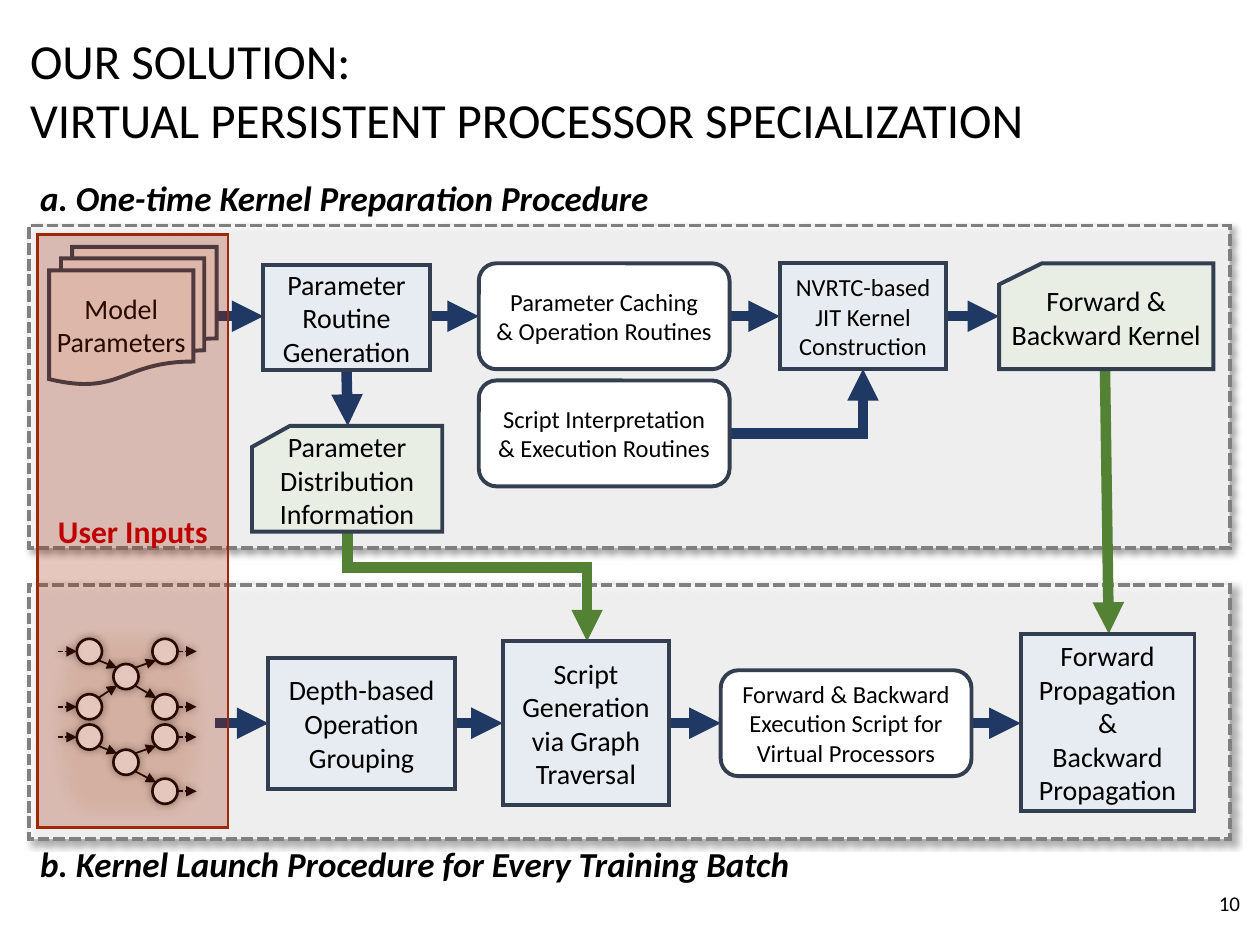
"""Builds a slide on virtual persistent processor specialization."""
import copy

import lxml.etree
import pptx
import pptx.dml.color
import pptx.enum.dml
import pptx.enum.shapes
import pptx.enum.text
import pptx.oxml.ns
import pptx.util

Inches, Pt, qn = pptx.util.Inches, pptx.util.Pt, pptx.oxml.ns.qn
Kind = pptx.enum.shapes.MSO_SHAPE
Link = pptx.enum.shapes.MSO_CONNECTOR
Align = pptx.enum.text.PP_ALIGN
Anchor = pptx.enum.text.MSO_ANCHOR
HEX = {
    "black": "000000", "white": "FFFFFF", "gray": "808080", "slate": "333F50",
    "navy": "203864", "green": "548235", "blue": "DEEBF7", "mint": "E2F0D9",
    "peach": "FBE5D6", "sand": "E7E1D9", "rust": "9E2807", "red": "C00000",
}
FLAT = (0, 0, 0, 0)
INSET = (0.1, 0.05, 0.1, 0.05)
CARD = (0, 0, 0, 0.15)


def tint(name):
    return pptx.dml.color.RGBColor.from_string(HEX[name])


def add(node, tag, **attrs):
    return lxml.etree.SubElement(node, qn(tag), {k: str(v) for k, v in attrs.items()})


def shade(effects, blur, dist=0, turn=0):
    glow = add(effects, "a:outerShdw", blurRad=Pt(blur), dist=Pt(dist),
               dir=turn * 60000, algn="ctr", rotWithShape=0)
    add(add(glow, "a:srgbClr", val=HEX["black"]), "a:alpha", val=40000)


def stroke(item, color, width, dash=False):
    item.line.color.rgb = tint(color)
    item.line.width = Pt(width)
    if dash:
        item.line.dash_style = pptx.enum.dml.MSO_LINE.SQUARE_DOT
    edge = item._element.spPr.find(qn("a:ln"))
    add(edge, "a:miter", lim=800000)
    return edge


def write(frame, text, size=16, color="black", bold=False, italic=False,
          align=Align.CENTER, anchor=Anchor.MIDDLE, inset=INSET):
    frame.word_wrap = True
    frame.vertical_anchor = anchor
    (frame.margin_left, frame.margin_top,
     frame.margin_right, frame.margin_bottom) = map(Inches, inset)
    frame.text = text
    for para in frame.paragraphs:
        para.alignment = align
        for run in para.runs:
            font = run.font
            font.name, font.size = "Calibri", Pt(size)
            font.bold, font.italic = bold, italic
            font.color.rgb = tint(color)
        for gap in para._p.findall(qn("a:br")):
            gap.append(copy.deepcopy(para.runs[0]._r.rPr))


def label(shapes, at, text, **form):
    box = shapes.add_textbox(*map(Inches, at))
    write(box.text_frame, text, **form)


def block(shapes, kind, at, fill, alpha=100, line="slate", width=2.25,
          dash=False, glow=None):
    item = shapes.add_shape(kind, *map(Inches, at))
    item.fill.solid()
    item.fill.fore_color.rgb = tint(fill)
    if alpha < 100:
        add(item._element.spPr.find(qn("a:solidFill"))[0], "a:alpha", val=alpha * 1000)
    if line:
        stroke(item, line, width, dash)
    else:
        item.line.fill.background()
    item.shadow.inherit = False
    if glow:
        shade(item._element.spPr.find(qn("a:effectLst")), *glow)
    return item


def arrow(shapes, ends, color="navy", width=6, dash=False, glow=None,
          kind=Link.STRAIGHT):
    item = shapes.add_connector(kind, *map(Inches, ends))
    add(stroke(item, color, width, dash), "a:tailEnd", type="triangle")
    effects = add(item._element.spPr, "a:effectLst")
    if glow:
        shade(effects, *glow)
    return item


def corner(shapes, ends):
    item = arrow(shapes, ends, kind=Link.ELBOW)
    item._element.spPr.find(qn("a:prstGeom")).set("prst", "bentConnector2")


def step(shapes, ends, bend):
    left, top, right, low = ends
    x, y = (left + right) / 2, (top + low) / 2
    w, h = (low - top) / 2, (right - left) / 2
    item = arrow(shapes, (x + w, y - h, x - w, y + h), "green", kind=Link.ELBOW)
    part = item._element.spPr
    part.find(qn("a:xfrm")).set("rot", str(270 * 60000))
    guides = part.find(qn("a:prstGeom")).find(qn("a:avLst"))
    add(guides, "a:gd", name="adj1", fmla=f"val {round(bend * 100000)}")


def graph(shapes):
    group = shapes.add_group_shape().shapes
    base = block(group, Kind.FLOWCHART_TERMINATOR, (0.33, 4.93, 1.38, 1.64),
                 "sand", line=None)
    add(base._element.spPr.find(qn("a:effectLst")), "a:softEdge", rad=Inches(0.14))
    glow, size, near, far = (5,), 0.2, 0.03, 0.17
    left, mid, right = 0.61, 0.9, 1.21
    trees = [((5.07, 5.51), 5.27, (5.07, 5.51)), ((5.75,), 5.95, (5.75, 6.18))]
    for ins, hub, outs in trees:
        spots = [(left, y) for y in ins] + [(mid, hub)] + [(right, y) for y in outs]
        for x, y in spots:
            block(group, Kind.OVAL, (x, y, size, size), "white",
                  line="black", width=1.5, glow=glow)
        links = [(left, y, mid, hub) for y in ins] + [(mid, hub, right, y) for y in outs]
        for x, y, u, v in links:
            start, stop = (far, near) if v > y else (near, far)
            arrow(group, (x + far, y + start, u + near, v + stop), "black", 1, glow=glow)
        stubs = [(left - 0.15, y) for y in ins] + [(right + size, y) for y in outs]
        for x, y in stubs:
            arrow(group, (x, y + size / 2, x + 0.15, y + size / 2), "black", 1, True, glow)


def main():
    deck = pptx.Presentation()
    deck.slide_width, deck.slide_height = Inches(10), Inches(7.5)
    shapes = deck.slides.add_slide(deck.slide_layouts[6]).shapes
    for top, height in ((1.79, 2.56), (4.64, 2.02)):
        block(shapes, Kind.RECTANGLE, (0.23, top, 9.53, height), "white", 80,
              "gray", dash=True, glow=(4, 3, 45))

    label(shapes, (0.14, 0.1, 8.5, 1.22),
          "OUR SOLUTION:\vVIRTUAL PERSISTENT PROCESSOR SPECIALIZATION",
          size=28, align=Align.LEFT)
    label(shapes, (9.47, 7.02, 0.47, 0.3), "10", size=12,
          align=Align.RIGHT, anchor=Anchor.TOP)
    for top, text in ((1.4, "a. One-time Kernel Preparation Procedure"),
                      (6.69, "b. Kernel Launch Procedure for Every Training Batch")):
        label(shapes, (0.22, top, 7.82, 0.34), text, size=20, bold=True, italic=True,
              align=Align.LEFT, anchor=Anchor.TOP, inset=(0.1, 0, 0, 0))

    rows = {2.51: ((1.72, 2.09), (3.42, 3.8), (5.79, 6.19), (7.51, 7.93)),
            5.74: ((1.71, 2.13), (3.61, 3.99), (5.32, 5.72), (7.71, 8.1))}
    for y, spans in rows.items():
        for start, stop in spans:
            arrow(shapes, (start, y, stop, y))
    arrow(shapes, (2.75, 2.94, 2.76, 3.38))
    arrow(shapes, (8.77, 2.93, 8.8, 5.03), "green")
    corner(shapes, (5.79, 3.44, 6.85, 2.93))
    step(shapes, (2.76, 4.21, 4.66, 5.09), 0.334)

    task = (Kind.FLOWCHART_PROCESS, "blue", 46)
    card = (Kind.FLOWCHART_CARD, "mint", 41)
    code = (Kind.FLOWCHART_ALTERNATE_PROCESS, "white", 100)
    pile = (Kind.FLOWCHART_MULTIDOCUMENT, "peach", 46)
    boxes = [
        (pile, (0.39, 1.96, 1.33, 1.09), "Model Parameters", 16, FLAT),
        (task, (2.09, 2.1, 1.32, 0.84), "Parameter Routine Generation", 16, INSET),
        (code, (3.8, 2.09, 1.99, 0.84), "Parameter Caching\v& Operation Routines", 14, INSET),
        (task, (6.19, 2.09, 1.32, 0.84), "NVRTC-based\nJIT Kernel Construction", 14, FLAT),
        (card, (7.93, 2.09, 1.7, 0.84), "Forward & Backward Kernel", 16, CARD),
        (card, (2, 3.38, 1.51, 0.84), "Parameter Distribution Information", 16, CARD),
        (code, (3.8, 3.02, 1.99, 0.84),
         "Script Interpretation\v& Execution Routines", 14, INSET),
        (task, (2.13, 5.22, 1.48, 1.04), "Depth-based Operation Grouping", 16, FLAT),
        (task, (3.99, 5.09, 1.32, 1.3), "Script Generation via Graph Traversal", 16, INSET),
        (code, (5.72, 5.32, 1.99, 0.84),
         "Forward & Backward Execution Script for Virtual Processors", 14, FLAT),
        (task, (8.1, 5.03, 1.38, 1.41),
         "Forward Propagation\n&\nBackward Propagation", 16, FLAT),
    ]
    for (kind, fill, alpha), at, text, size, inset in boxes:
        item = block(shapes, kind, at, fill, alpha)
        write(item.text_frame, text, size=size, inset=inset)

    graph(shapes)
    veil = block(shapes, Kind.RECTANGLE, (0.3, 1.86, 1.51, 4.71), "rust", 26, "rust", 1.5)
    write(veil.text_frame, "User Inputs", size=18, color="red", bold=True)
    deck.save("out.pptx")


if __name__ == "__main__":
    main()
